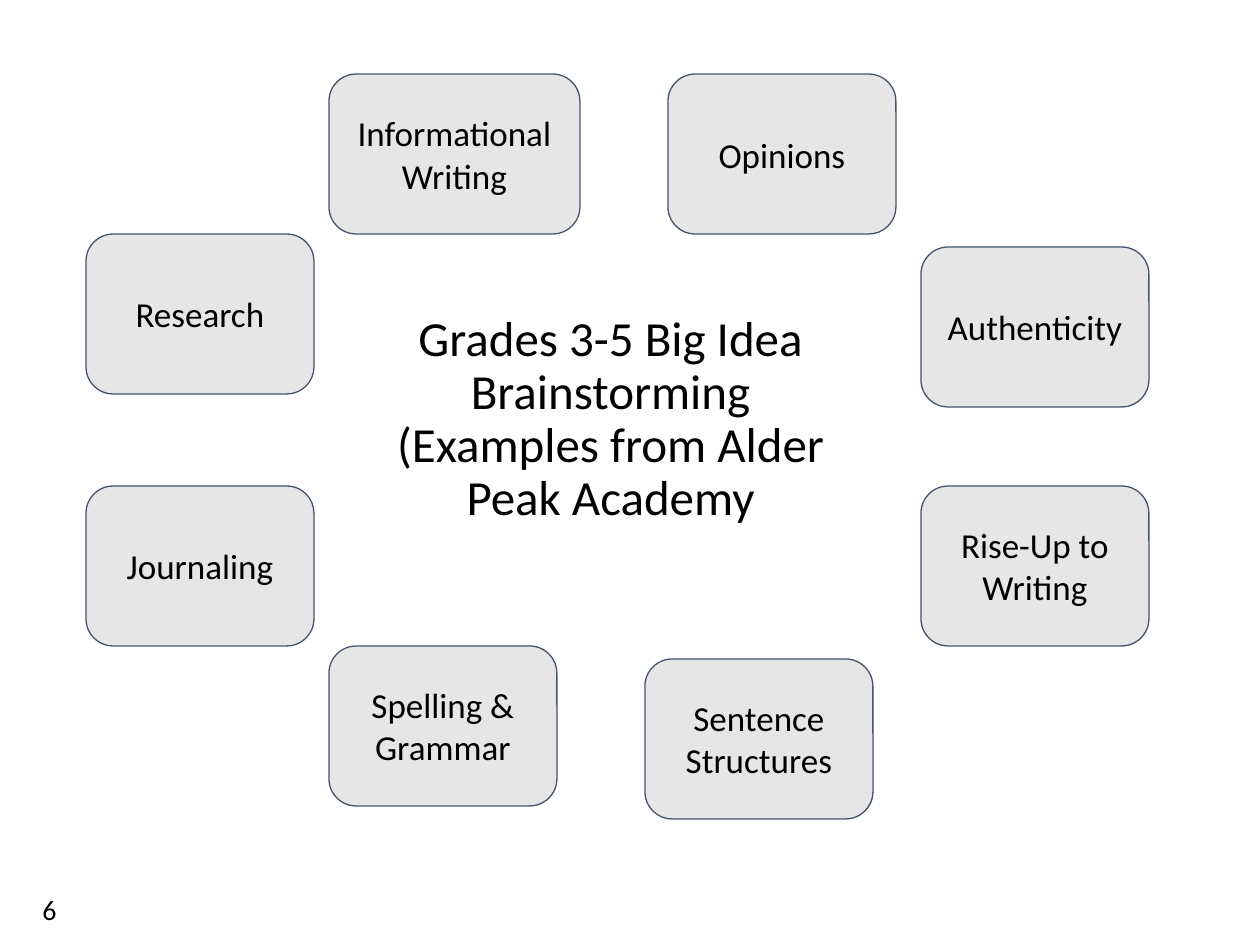
"""Build the Grades 3-5 brainstorming slide: a central title ringed by idea cards."""
from pptx import Presentation
from pptx.dml.color import RGBColor
from pptx.enum.shapes import MSO_SHAPE
from pptx.enum.text import MSO_ANCHOR, MSO_AUTO_SIZE, PP_ALIGN
from pptx.util import Pt

PX = 914400 // 126
SLIDE_SIZE = (1260, 945)
TITLE = "Grades 3-5 Big Idea Brainstorming (Examples from Alder Peak Academy"
TITLE_BOX = (368, 314, 485, 238)
PAGE_NUMBER = "6"
PAGE_NUMBER_BOX = (30, 886, 284, 50)

CARD_WIDTH, WIDE_CARD_WIDTH, CARD_HEIGHT = 228, 251, 160
CARDS = [
    ("Research", 86, 234, CARD_WIDTH),
    ("Journaling", 86, 486, CARD_WIDTH),
    ("Informational Writing", 329, 74, WIDE_CARD_WIDTH),
    ("Opinions", 668, 74, CARD_WIDTH),
    ("Authenticity", 921, 247, CARD_WIDTH),
    ("Rise-Up to Writing", 921, 486, CARD_WIDTH),
    ("Spelling & Grammar", 329, 646, CARD_WIDTH),
    ("Sentence Structures", 645, 659, CARD_WIDTH),
]

THEME = {
    "font": "Calibri",
    "text": RGBColor.from_string("000000"),
    "card": RGBColor.from_string("E7E6E6"),
    "outline": RGBColor.from_string("44546A"),
    "outline_width": Pt(0.75),
    "title_size": Pt(28),
    "card_size": Pt(20),
    "number_size": Pt(16),
}


def set_values(target, values):
    """Set each named attribute on the target."""
    for name, value in values.items():
        setattr(target, name, value)


def place(shape, box):
    """Move and size a shape to a pixel box."""
    set_values(shape, dict(zip(("left", "top", "width", "height"), (n * PX for n in box))))


def write(shape, text, size, alignment, anchor, margins):
    """Put formatted text in a shape, with horizontal and vertical margins in points."""
    horizontal, vertical = (Pt(margin) for margin in margins)
    frame = shape.text_frame
    set_values(frame, {
        "word_wrap": True,
        "auto_size": MSO_AUTO_SIZE.NONE,
        "vertical_anchor": anchor,
        "margin_left": horizontal,
        "margin_right": horizontal,
        "margin_top": vertical,
        "margin_bottom": vertical,
    })
    paragraph = frame.paragraphs[0]
    paragraph.alignment = alignment
    run = paragraph.add_run()
    run.text = text
    set_values(run.font, {"name": THEME["font"], "size": size, "bold": False})
    run.font.color.rgb = THEME["text"]
    return paragraph


def add_card(slide, text, left, top, width):
    """Add one rounded idea card."""
    box = (left, top, width, CARD_HEIGHT)
    card = slide.shapes.add_shape(MSO_SHAPE.ROUNDED_RECTANGLE, *(n * PX for n in box))
    card.adjustments[0] = 0.17
    card.shadow.inherit = False
    card.fill.solid()
    card.fill.fore_color.rgb = THEME["card"]
    card.line.color.rgb = THEME["outline"]
    card.line.width = THEME["outline_width"]
    write(card, text, THEME["card_size"], PP_ALIGN.CENTER, MSO_ANCHOR.MIDDLE, (7.2, 7.2))


def main():
    """Assemble and save the slide."""
    presentation = Presentation()
    presentation.slide_width, presentation.slide_height = (n * PX for n in SLIDE_SIZE)
    slide = presentation.slides.add_slide(presentation.slide_layouts[0])
    subtitle = slide.placeholders[1].element
    subtitle.getparent().remove(subtitle)

    title = slide.shapes.title
    place(title, TITLE_BOX)
    heading = write(title, TITLE, THEME["title_size"], PP_ALIGN.CENTER, MSO_ANCHOR.TOP, (0, 0))
    heading.line_spacing = 0.9

    number = slide.shapes.add_textbox(*(n * PX for n in PAGE_NUMBER_BOX))
    write(number, PAGE_NUMBER, THEME["number_size"], PP_ALIGN.LEFT, MSO_ANCHOR.TOP, (7.2, 3.6))

    for card in CARDS:
        add_card(slide, *card)
    presentation.save("out.pptx")


if __name__ == "__main__":
    main()
